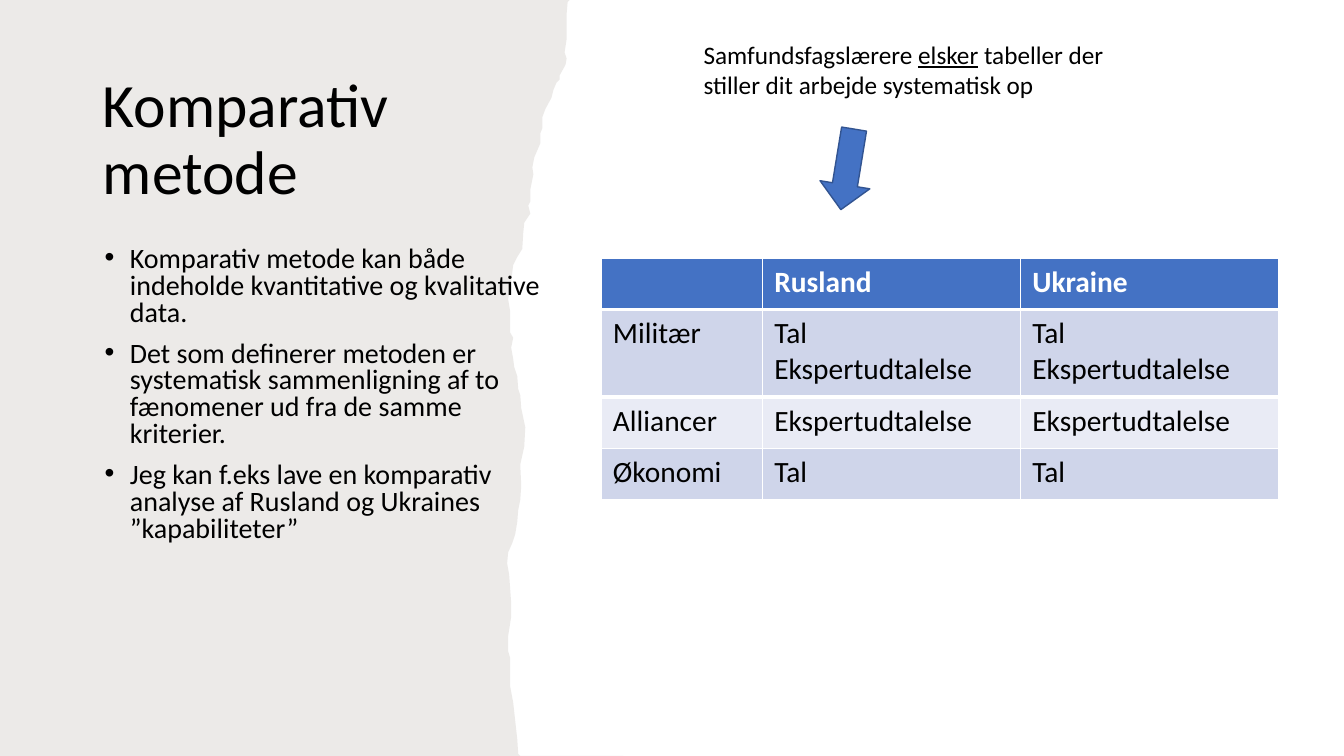
from lxml import etree
from pptx import Presentation
from pptx import util as u
from pptx.dml.color import RGBColor
from pptx.enum import shapes, text
from pptx.oxml.ns import qn

FONT = "Calibri"
COLORS = {name: RGBColor.from_string(value) for name, value in {
    "paper": "82766A", "black": "000000", "white": "FFFFFF", "blue": "4472C4",
    "outline": "325491", "band": "CFD5EA", "light band": "E9EBF5",
}.items()}
SLIDE_WIDTH, SLIDE_HEIGHT = 13.33, 7.5


def box(left, top, width, height):
    return [u.Inches(length) for length in (left, top, width, height)]


def write(frame, content, size=18, ink="black", bold=False, spacing=1.0, before=0, bullet=None):
    """Each line becomes a paragraph; words between underscores are underlined."""
    frame.word_wrap = True
    for index, line in enumerate(content.split("\n")):
        paragraph = frame.add_paragraph() if index else frame.paragraphs[0]
        paragraph.alignment = text.PP_ALIGN.LEFT
        paragraph.line_spacing = spacing
        paragraph.space_before = u.Pt(before)
        if bullet:
            properties = paragraph._p.get_or_add_pPr()
            properties.set("marL", str(u.Inches(0.25)))
            properties.set("indent", str(-u.Inches(0.25)))
            etree.SubElement(properties, qn("a:buFont"), typeface="Arial")
            etree.SubElement(properties, qn("a:buChar"), char=bullet)
        for position, words in enumerate(line.split("_")):
            run = paragraph.add_run()
            run.text = words
            run.font.name = FONT
            run.font.size = u.Pt(size)
            run.font.bold = bold
            run.font.underline = position % 2 == 1
            run.font.color.rgb = COLORS[ink]


presentation = Presentation()
presentation.slide_width = u.Inches(SLIDE_WIDTH)
presentation.slide_height = u.Inches(SLIDE_HEIGHT)
slide = presentation.slides.add_slide(presentation.slide_layouts[5])

# Torn paper panel: the ragged right edge from top to bottom, as (x, y) in inches
torn_edge = [
    (5.65, 0), (5.63, 0.02), (5.62, 0.14), (5.62, 0.39), (5.6, 0.52), (5.62, 0.58),
    (5.61, 0.64), (5.6, 0.66), (5.55, 0.75), (5.55, 0.79), (5.52, 0.82), (5.49, 0.89),
    (5.47, 0.97), (5.41, 1.08), (5.38, 1.16), (5.38, 1.27), (5.36, 1.32), (5.36, 1.42),
    (5.33, 1.49), (5.3, 1.56), (5.28, 1.66), (5.29, 1.73), (5.26, 1.88), (5.26, 2),
    (5.24, 2.04), (5.26, 2.12), (5.2, 2.21), (5.19, 2.31), (5.18, 2.47), (5.13, 2.55),
    (5.09, 2.63), (5.07, 2.79), (5.04, 2.97), (5.06, 3.09), (5.06, 3.3), (5.09, 3.35),
    (5.07, 3.45), (5.09, 3.56), (5.1, 3.64), (5.13, 3.73), (5.14, 3.86), (5.16, 3.92),
    (5.17, 4.05), (5.21, 4.24), (5.2, 4.43), (5.16, 4.61), (5.17, 4.82), (5.16, 4.96),
    (5.14, 5.06), (5.13, 5.18), (5.11, 5.3), (5.08, 5.39), (5.04, 5.48), (5.03, 5.59),
    (5.05, 5.7), (5.07, 5.98), (5.07, 6.12), (5.04, 6.31), (5.04, 6.46), (5.06, 6.53),
    (5.06, 6.81), (5.09, 6.97), (5.11, 7.15), (5.13, 7.33), (5.14, 7.48), (5.16, 7.5),
]
bottom_corners = [(6.18, SLIDE_HEIGHT), (0, SLIDE_HEIGHT)]
builder = slide.shapes.build_freeform(0, 0)
builder.add_line_segments(
    [(u.Inches(x), u.Inches(y)) for x, y in torn_edge + bottom_corners], close=True)
panel = builder.convert_to_shape()
panel.shadow.inherit = False
panel.fill.solid()
panel.fill.fore_color.rgb = COLORS["paper"]
panel.line.fill.background()
paper_color = panel._element.spPr.find(qn("a:solidFill"))[0]
etree.SubElement(paper_color, qn("a:alpha"), val="15000")

# Title, raised above the panel
title = slide.shapes.title
slide.shapes._spTree.append(title._element)
title.left, title.top, title.width, title.height = box(0.92, 0.67, 4.09, 1.46)
title.text_frame.auto_size = text.MSO_AUTO_SIZE.NONE
title.text_frame.vertical_anchor = text.MSO_ANCHOR.MIDDLE
write(title.text_frame, "Komparativ metode", size=44, spacing=0.9)

# Bullet list
bullets = [
    "Komparativ metode kan både indeholde kvantitative og kvalitative data.",
    "Det som definerer metoden er systematisk sammenligning af to fænomener "
    "ud fra de samme kriterier.",
    "Jeg kan f.eks lave en komparativ analyse af Rusland og Ukraines ”kapabiliteter”",
]
body = slide.shapes.add_textbox(*box(0.94, 2.4, 4.63, 4.27))
write(body.text_frame, "\n".join(bullets), size=20, spacing=0.8, before=10, bullet="•")

# Comparison table: one entry a row with height, fill and cell texts
column_widths = [1.6, 2.56, 2.56]
rows = [
    (0.51, "blue", ["", "Rusland", "Ukraine"]),
    (0.87, "band", ["Militær", "Tal\nEkspertudtalelse", "Tal\nEkspertudtalelse"]),
    (0.51, "light band", ["Alliancer", "Ekspertudtalelse", "Ekspertudtalelse"]),
    (0.51, "band", ["Økonomi", "Tal", "Tal"]),
]
table_height = sum(height for height, fill, values in rows)
table = slide.shapes.add_table(
    len(rows), len(column_widths), *box(5.96, 2.56, sum(column_widths), table_height)).table
for column, width in zip(table.columns, column_widths):
    column.width = u.Inches(width)
for row, (height, fill, values) in zip(table.rows, rows):
    row.height = u.Inches(height)
    is_header = fill == "blue"
    for cell, value in zip(row.cells, values):
        cell.fill.solid()
        cell.fill.fore_color.rgb = COLORS[fill]
        cell.margin_left = cell.margin_right = u.Inches(0.12)
        cell.margin_top = cell.margin_bottom = u.Inches(0.06)
        if value:
            write(cell.text_frame, value, size=21, bold=is_header,
                  ink="white" if is_header else "black")

# Thick rule under the header, set on both rows that share it
for row_index, side in enumerate(["a:lnB", "a:lnT"]):
    for cell in table.rows[row_index].cells:
        border = etree.Element(qn(side), w=str(u.Pt(3)))
        border_fill = etree.SubElement(border, qn("a:solidFill"))
        etree.SubElement(border_fill, qn("a:srgbClr"), val=str(COLORS["white"]))
        cell._tc.get_or_add_tcPr().insert(0, border)

# Arrow pointing down to the table
arrow = slide.shapes.add_shape(shapes.MSO_SHAPE.RIGHT_ARROW, *box(8, 1.43, 0.81, 0.5))
arrow.rotation = 99.3
arrow.shadow.inherit = False
arrow.fill.solid()
arrow.fill.fore_color.rgb = COLORS["blue"]
arrow.line.color.rgb = COLORS["outline"]
arrow.line.width = u.Pt(1)

# Remark above the arrow
remark = slide.shapes.add_textbox(*box(6.88, 0.34, 4.55, 0.71))
write(remark.text_frame,
      "Samfundsfagslærere _elsker_ tabeller der stiller dit arbejde systematisk op")

presentation.save("out.pptx")
